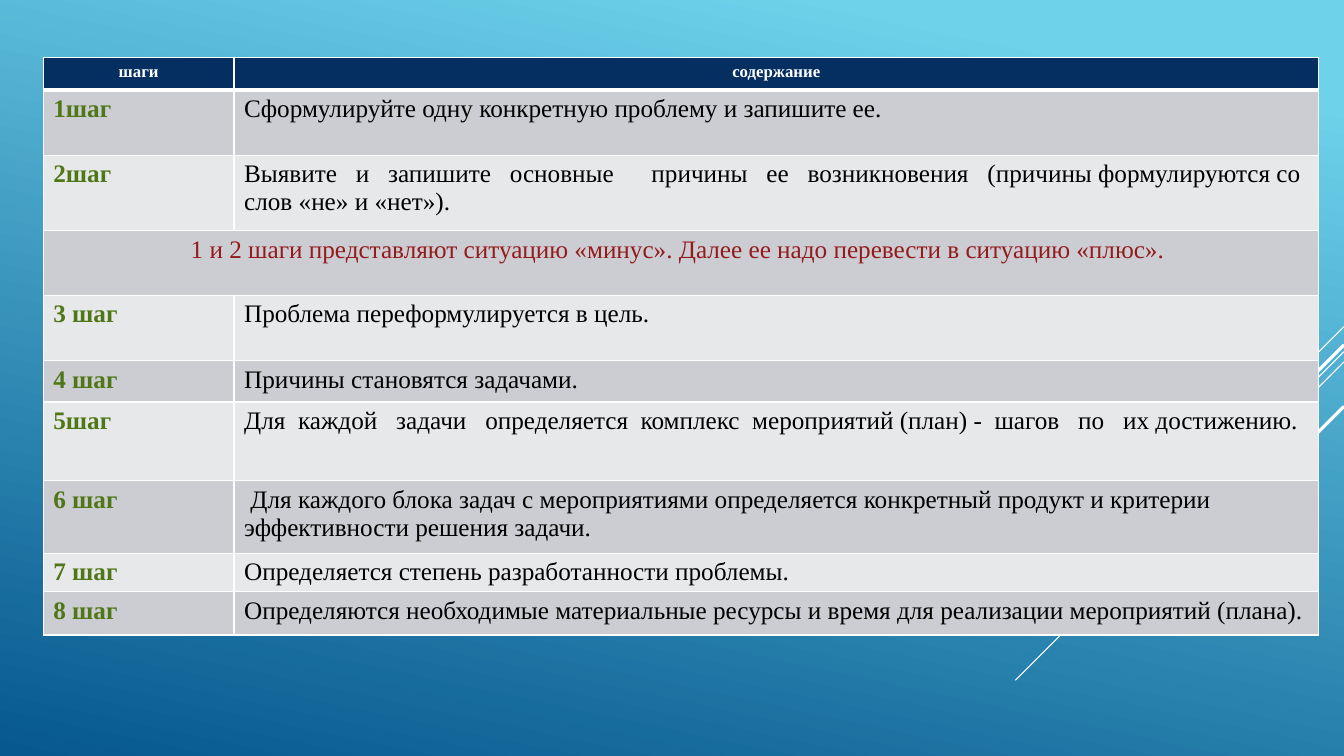
"""Build the slide with the table of problem-solving steps."""
import dataclasses

import lxml.etree
import pptx
import pptx.dml.color
import pptx.enum.shapes
import pptx.enum.text
import pptx.oxml.ns
import pptx.util

Cm = pptx.util.Cm
Pt = pptx.util.Pt
qn = pptx.oxml.ns.qn

HEADINGS = ("шаги", "содержание")
STEPS = [
    ("1шаг", "Сформулируйте одну конкретную проблему и запишите ее. "),
    ("2шаг", "Выявите   и   запишите   основные      причины   ее   возникновения   "
             "(причины формулируются со слов «не» и «нет»). "),
    ("1 и 2 шаги представляют ситуацию «минус». Далее ее надо перевести в ситуацию «плюс». ",),
    ("3 шаг", "Проблема переформулируется в цель. "),
    ("4 шаг", "Причины становятся задачами. "),
    ("5шаг", "Для  каждой   задачи   определяется  комплекс  мероприятий (план) -  "
             "шагов   по   их достижению."),
    ("6 шаг", " Для каждого блока задач с мероприятиями определяется конкретный продукт "
              "и критерии эффективности решения задачи."),
    ("7 шаг", "Определяется степень разработанности проблемы."),
    ("8 шаг", "Определяются необходимые материальные ресурсы и время для реализации "
              "мероприятий (плана)."),
]
SLIDE_SIZE = (33.87, 19.05)
TABLE_CORNER = (1.09, 1.45)
COLUMN_WIDTHS = (4.81, 27.33)
ROW_HEIGHTS = (0.81, 1.65, 1.9, 1.63, 1.65, 1.04, 1.98, 1.83, 0.97, 1.09)
DIAGONALS = [
    {"top": 8.23, "reach": 2.54, "weight": 0.75},
    {"top": 8.86, "reach": 8.28, "weight": 0.75},
    {"top": 9.12, "reach": 5.27, "weight": 0.75},
    {"top": 8.69, "reach": 4.85, "weight": 2.25},
    {"top": 10.24, "reach": 3.53, "weight": 2.25},
]


@dataclasses.dataclass(frozen=True)
class Theme:
    """Colours and type sizes of the slide."""
    font: str = "Times New Roman"
    heading_size: int = 12
    body_size: int = 18
    sky: str = "6ED2EB"
    sea: str = "06588E"
    line: str = "FFFFFF"
    heading: str = "FFFFFF"
    heading_fill: str = "052F61"
    bands: tuple = ("E7E8EA", "CCCDD2")
    step: str = "4F7717"
    body: str = "000000"
    remark: str = "941A1B"
    border: int = 1
    heading_border: int = 3


THEME = Theme()


def rgb(code):
    """Return the colour for a hex code."""
    return pptx.dml.color.RGBColor.from_string(code)


def paint_background(slide):
    """Fill the background with a slanted gradient."""
    fill = slide.background.fill
    fill.gradient()
    fill.gradient_angle = 360 - 102
    for stop, code, position in zip(fill.gradient_stops, (THEME.sky, THEME.sea), (0.1, 1)):
        stop.color.rgb = rgb(code)
        stop.position = position


def draw_diagonal(slide, top, reach, weight):
    """Draw a 45-degree line down from the right edge."""
    right = SLIDE_SIZE[0]
    diagonal = slide.shapes.add_connector(
        pptx.enum.shapes.MSO_CONNECTOR.STRAIGHT,
        Cm(right), Cm(top), Cm(right - reach), Cm(top + reach))
    diagonal.line.color.rgb = rgb(THEME.line)
    diagonal.line.width = Pt(weight)
    lxml.etree.SubElement(diagonal._element.spPr, qn("a:effectLst"))


def style_cell(cell, fill, top, bottom):
    """Set the borders and the fill of a cell."""
    properties = cell._tc.get_or_add_tcPr()
    widths = {"L": THEME.border, "R": THEME.border, "T": top, "B": bottom}
    for side, width in widths.items():
        border = lxml.etree.SubElement(properties, qn(f"a:ln{side}"), w=str(Pt(width)))
        solid = lxml.etree.SubElement(border, qn("a:solidFill"))
        lxml.etree.SubElement(solid, qn("a:srgbClr"), val=THEME.line)
    cell.fill.solid()
    cell.fill.fore_color.rgb = rgb(fill)


def write_cell(cell, wording, size, color, bold, centred):
    """Write the wording of a cell as one run."""
    align = pptx.enum.text.PP_ALIGN
    paragraph = cell.text_frame.paragraphs[0]
    paragraph.alignment = align.CENTER if centred else align.LEFT
    run = paragraph.add_run()
    run.text = wording
    run.font.name = THEME.font
    run.font.size = Pt(size)
    run.font.bold = bold
    run.font.color.rgb = rgb(color)


def fill_table(table):
    """Style and fill the table row by row."""
    for column, width in zip(table.columns, COLUMN_WIDTHS):
        column.width = Cm(width)
    for index, (entries, height) in enumerate(zip([HEADINGS, *STEPS], ROW_HEIGHTS)):
        table.rows[index].height = Cm(height)
        heading = index == 0
        remark = len(entries) == 1
        fill = THEME.heading_fill if heading else THEME.bands[index % 2]
        top = THEME.heading_border if index == 1 else THEME.border
        bottom = THEME.heading_border if heading else THEME.border
        for cell in table.rows[index].cells:
            style_cell(cell, fill, top, bottom)
        if remark:
            table.cell(index, 0).merge(table.cell(index, 1))
        for position, wording in enumerate(entries):
            if heading:
                color = THEME.heading
            elif remark:
                color = THEME.remark
            else:
                color = (THEME.step, THEME.body)[position]
            write_cell(
                table.cell(index, position), wording,
                THEME.heading_size if heading else THEME.body_size, color,
                bold=heading or (position == 0 and not remark),
                centred=heading or remark)


def main():
    """Build and save the slide."""
    presentation = pptx.Presentation()
    presentation.slide_width, presentation.slide_height = map(Cm, SLIDE_SIZE)
    slide = presentation.slides.add_slide(presentation.slide_layouts[6])
    paint_background(slide)
    for diagonal in DIAGONALS:
        draw_diagonal(slide, **diagonal)
    frame = slide.shapes.add_table(
        len(ROW_HEIGHTS), len(COLUMN_WIDTHS), *map(Cm, TABLE_CORNER),
        Cm(sum(COLUMN_WIDTHS)), Cm(sum(ROW_HEIGHTS)))
    fill_table(frame.table)
    presentation.save("out.pptx")


if __name__ == "__main__":
    main()
